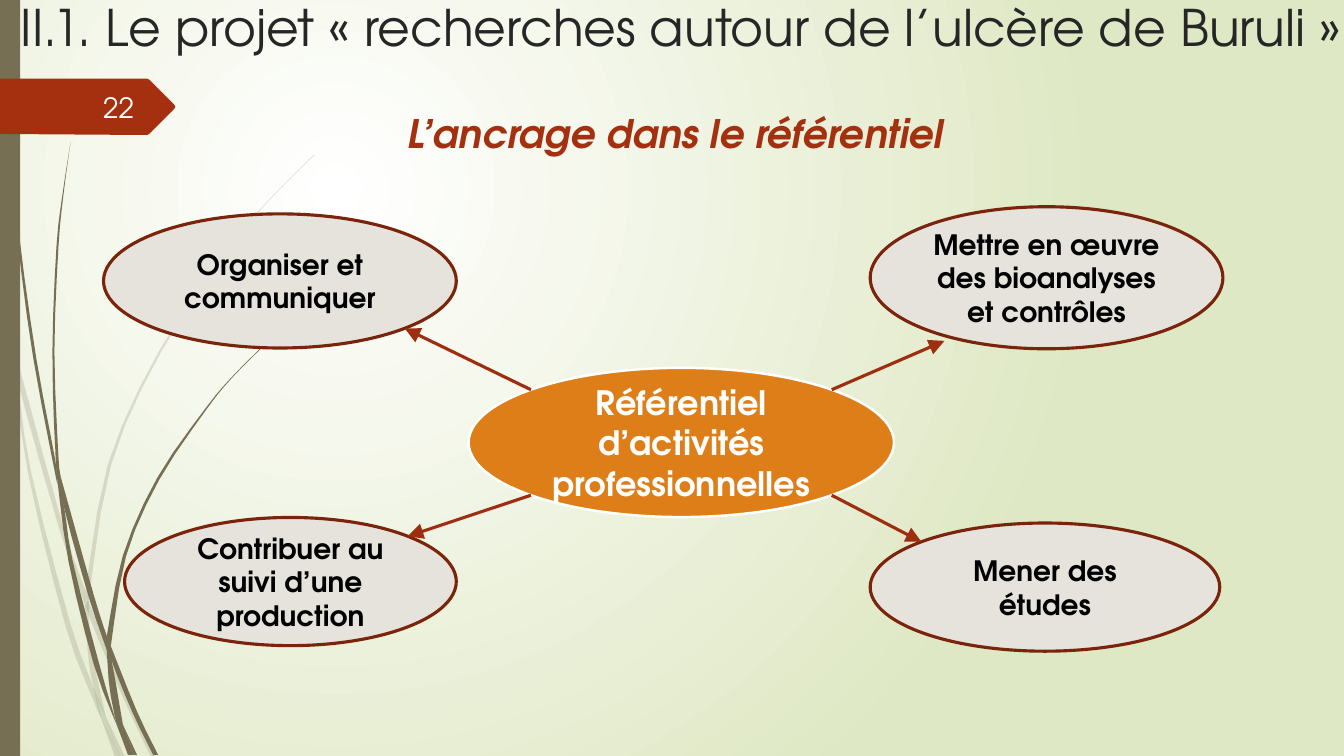
from dataclasses import dataclass
from math import sqrt

from lxml import etree
from pptx import Presentation
from pptx.dml.color import RGBColor
from pptx.enum.shapes import MSO_CONNECTOR, MSO_SHAPE
from pptx.enum.text import MSO_ANCHOR, MSO_AUTO_SIZE, PP_ALIGN
from pptx.oxml import parse_xml
from pptx.oxml.ns import nsdecls, qn
from pptx.util import Cm, Pt

STRAIGHT = MSO_CONNECTOR.STRAIGHT
ELLIPSE, RECTANGLE = MSO_SHAPE.OVAL, MSO_SHAPE.RECTANGLE
TOP, MIDDLE = MSO_ANCHOR.TOP, MSO_ANCHOR.MIDDLE
LEFT, CENTER, RIGHT = PP_ALIGN.LEFT, PP_ALIGN.CENTER, PP_ALIGN.RIGHT
NO_FIT = MSO_AUTO_SIZE.NONE
TITLE_ONLY = 5
CURVE_STEPS = 3
GRID = 2.54 / 100


@dataclass(frozen=True)
class Theme:
    font: str = "TeX Gyre Adventor"
    white: str = "FFFFFF"
    number: str = "FEFFFF"
    meadow: str = "DFE8C4"
    olive: str = "766F54"
    ink: str = "262626"
    black: str = "000000"
    rust: str = "A53010"
    arrow: str = "9E2E0F"
    outline: str = "7A240C"
    orange: str = "DE7E18"
    stone: str = "E5E3DB"
    title_size: int = 36
    subtitle_size: int = 28
    hub_size: int = 24
    label_size: int = 20


THEME = Theme()

HUB = (11.81, 9.27, 10.72, 3.76)
ACTIVITIES = [
    ("Mettre en œuvre des bioanalyses et contrôles", (21.93, 5.21, 8.89, 3.58), (1, -1), (23.8, 8.59)),
    ("Mener des études", (21.93, 13.18, 8.81, 3.23), (1, 1), None),
    ("Contribuer au suivi d’une production", (3.14, 13.04, 8.36, 3.23), (-1, 1), None),
    ("Organiser et communiquer", (2.61, 5.39, 8.89, 3.38), (-1, -1), None),
]

PENNANT = [(0, 78), (146, 78), (148, 79), (173, 104), (174, 106),
           (173, 108), (148, 133), (146, 134), (0, 133)]

PALE_WISPS = [
    ([(0, 299), (10, 344), (11, 350)], [(0, 282), (9, 322), (11, 350)]),
    ([(14, 345), (17, 376), (58, 522), (84, 599)], [(14, 345), (62, 520), (85, 586)]),
    ([(88, 596), (88, 610), (123, 694), (150, 751)], [(88, 596), (92, 607), (127, 692), (155, 751)]),
    ([(105, 711), (119, 751)], [(105, 711), (124, 751)]),
    ([(11, 350), (28, 470), (65, 621), (92, 693), (101, 714)],
     [(11, 350), (17, 376), (31, 469), (70, 619), (93, 683), (101, 714)]),
    ([(84, 599), (87, 646), (93, 683), (105, 711)], [(84, 599), (88, 610), (91, 646), (105, 711)]),
    ([(312, 153), (268, 197), (228, 244), (158, 348), (107, 461), (85, 586)],
     [(312, 154), (268, 198), (229, 245), (160, 349), (110, 462), (88, 596)]),
    ([(101, 714), (114, 751)], [(101, 714), (119, 751)]),
    ([(85, 586), (84, 599), (88, 608)], [(85, 586), (88, 596), (88, 610)]),
    ([(93, 683), (101, 714), (119, 751)], [(93, 683), (105, 711), (119, 751)]),
]
DARK_WISPS = [
    ([(3, 0), (7, 110), (17, 233), (33, 355), (57, 481)],
     [(4, 0), (8, 109), (19, 232), (36, 355), (55, 457), (57, 481)]),
    ([(60, 472), (64, 505), (88, 592), (106, 645)], [(60, 472), (93, 590), (106, 631)]),
    ([(110, 641), (111, 656), (132, 708), (152, 749)], [(110, 641), (136, 706), (157, 749)]),
    ([(57, 477), (68, 557), (93, 659), (117, 722)],
     [(57, 477), (64, 505), (72, 556), (98, 657), (117, 722)]),
    ([(70, 141), (62, 193), (56, 245), (52, 349), (55, 449), (60, 472)],
     [(70, 141), (63, 193), (58, 245), (54, 349), (58, 453), (60, 472)]),
    ([(122, 719), (133, 749)], [(122, 719), (136, 749)]),
    ([(55, 449), (57, 477), (64, 505)], [(55, 449), (60, 472), (64, 505)]),
    ([(260, 344), (231, 373), (204, 405), (156, 474), (122, 551), (106, 631)],
     [(261, 344), (231, 374), (205, 406), (158, 476), (125, 552), (110, 641)]),
    ([(117, 722), (127, 749)], [(117, 722), (131, 749)]),
    ([(106, 645), (110, 691), (122, 719)], [(106, 645), (111, 656), (122, 719)]),
    ([(106, 631), (106, 645), (111, 656)], [(106, 631), (110, 641), (111, 656)]),
    ([(110, 691), (117, 722), (130, 749)], [(110, 691), (122, 719), (133, 749)]),
]


def set_all(target, values):
    for name, value in values.items():
        setattr(target, name, value)


def lengths(values):
    return [Cm(value) for value in values]


def write(shape, text, size, color, align=CENTER, anchor=MIDDLE, **style):
    frame = shape.text_frame
    set_all(frame, {"word_wrap": True, "auto_size": NO_FIT, "vertical_anchor": anchor})
    para = frame.paragraphs[0]
    para.alignment = align
    span = para.add_run()
    span.text = text
    set_all(span.font, {"name": THEME.font, "size": Pt(size), **style})
    span.font.color.rgb = RGBColor.from_string(color)


def paint(shape, fill, line=None, width=0):
    shape.shadow.inherit = False
    shape.fill.solid()
    shape.fill.fore_color.rgb = RGBColor.from_string(fill)
    if line:
        shape.line.color.rgb = RGBColor.from_string(line)
        shape.line.width = Pt(width)
    else:
        shape.line.fill.background()


def add_background(page):
    gradient = page.background.fill
    gradient.gradient()
    for stop, color in zip(gradient.gradient_stops, (THEME.white, THEME.meadow)):
        stop.color.rgb = RGBColor.from_string(color)
    node = page.element.find(".//" + qn("a:gradFill"))
    node.replace(node.find(qn("a:lin")), parse_xml(
        f'<a:path {nsdecls("a")} path="circle">'
        '<a:fillToRect l="50000" t="50000" r="100000" b="100000"/></a:path>'))


def smooth_edge(points):
    if len(points) == 2:
        return points
    padded = [points[0], *points, points[-1]]
    curve = []
    for a, b, c, d in zip(padded, padded[1:], padded[2:], padded[3:]):
        for t in (step / CURVE_STEPS for step in range(CURVE_STEPS)):
            curve.append(tuple(
                q + t * (r - p) / 2 + t * t * (2 * p - 5 * q + 4 * r - s) / 2
                + t ** 3 * (3 * q - p - 3 * r + s) / 2
                for p, q, r, s in zip(a, b, c, d)))
    return curve + [points[-1]]


def add_outline(page, points, color, opacity=100):
    corners = [lengths((x * GRID, y * GRID)) for x, y in points]
    builder = page.shapes.build_freeform(*corners[0])
    builder.add_line_segments(corners[1:], close=True)
    shape = builder.convert_to_shape()
    paint(shape, color)
    if opacity < 100:
        tint = shape.element.spPr.find(".//" + qn("a:srgbClr"))
        etree.SubElement(tint, qn("a:alpha"), val=str(opacity * 1000))


def add_decor(page):
    for wisps, opacity in ((PALE_WISPS, 20), (DARK_WISPS, 100)):
        for left, right in wisps:
            add_outline(page, smooth_edge(left) + smooth_edge(right)[::-1], THEME.olive, opacity)
    paint(page.shapes.add_shape(RECTANGLE, *lengths((0, 0, 0.51, 19.05))), THEME.olive)
    add_outline(page, PENNANT, THEME.rust)


def add_title(page, text):
    title = page.shapes.title
    place = lengths((0.27, -0.23, 34.42, 2.16))
    set_all(title, dict(zip(("left", "top", "width", "height"), place)))
    write(title, text, THEME.title_size, THEME.ink, LEFT, TOP)
    page.shapes.element.append(title.element)


def add_text(page, place, text, size, color, **style):
    write(page.shapes.add_textbox(*lengths(place)), text, size, color, **style)


def add_ellipse(page, place, text, size, color, fill, line, width):
    ellipse = page.shapes.add_shape(ELLIPSE, *lengths(place))
    paint(ellipse, fill, line, width)
    write(ellipse, text, size, color, bold=True)


def diagonal_site(place, side):
    return [start + extent / 2 * (1 + sign * sqrt(0.5))
            for start, extent, sign in zip(place[:2], place[2:], side)]


def add_arrow(page, start, tip):
    arrow = page.shapes.add_connector(STRAIGHT, *lengths((*start, *tip)))
    arrow.line.color.rgb = RGBColor.from_string(THEME.arrow)
    arrow.line.width = Pt(2.25)
    format_node = arrow.element.spPr
    etree.SubElement(format_node.find(qn("a:ln")), qn("a:tailEnd"), type="triangle", w="lg", len="lg")
    etree.SubElement(format_node, qn("a:effectLst"))


def main():
    deck = Presentation()
    set_all(deck, {"slide_width": Cm(33.87), "slide_height": Cm(19.05)})
    page = deck.slides.add_slide(deck.slide_layouts[TITLE_ONLY])
    add_background(page)
    add_decor(page)
    add_title(page, "II.1. Le projet « recherches autour de l’ulcère de Buruli »")
    add_text(page, (1.47, 2.19, 2.16, 1.02), "22", THEME.label_size, THEME.number, align=RIGHT)
    add_text(page, (9.31, 2.64, 15.42, 1.45), "L’ancrage dans le référentiel",
             THEME.subtitle_size, THEME.rust, anchor=TOP, bold=True, italic=True)
    add_ellipse(page, HUB, "Référentiel d’activités professionnelles",
                THEME.hub_size, THEME.white, THEME.orange, THEME.white, 1.75)
    for text, place, side, tip in ACTIVITIES:
        add_ellipse(page, place, text, THEME.label_size, THEME.black, THEME.stone, THEME.outline, 2.25)
        facing = [-sign for sign in side]
        add_arrow(page, diagonal_site(HUB, side), tip or diagonal_site(place, facing))
    deck.save("out.pptx")


if __name__ == "__main__":
    main()
